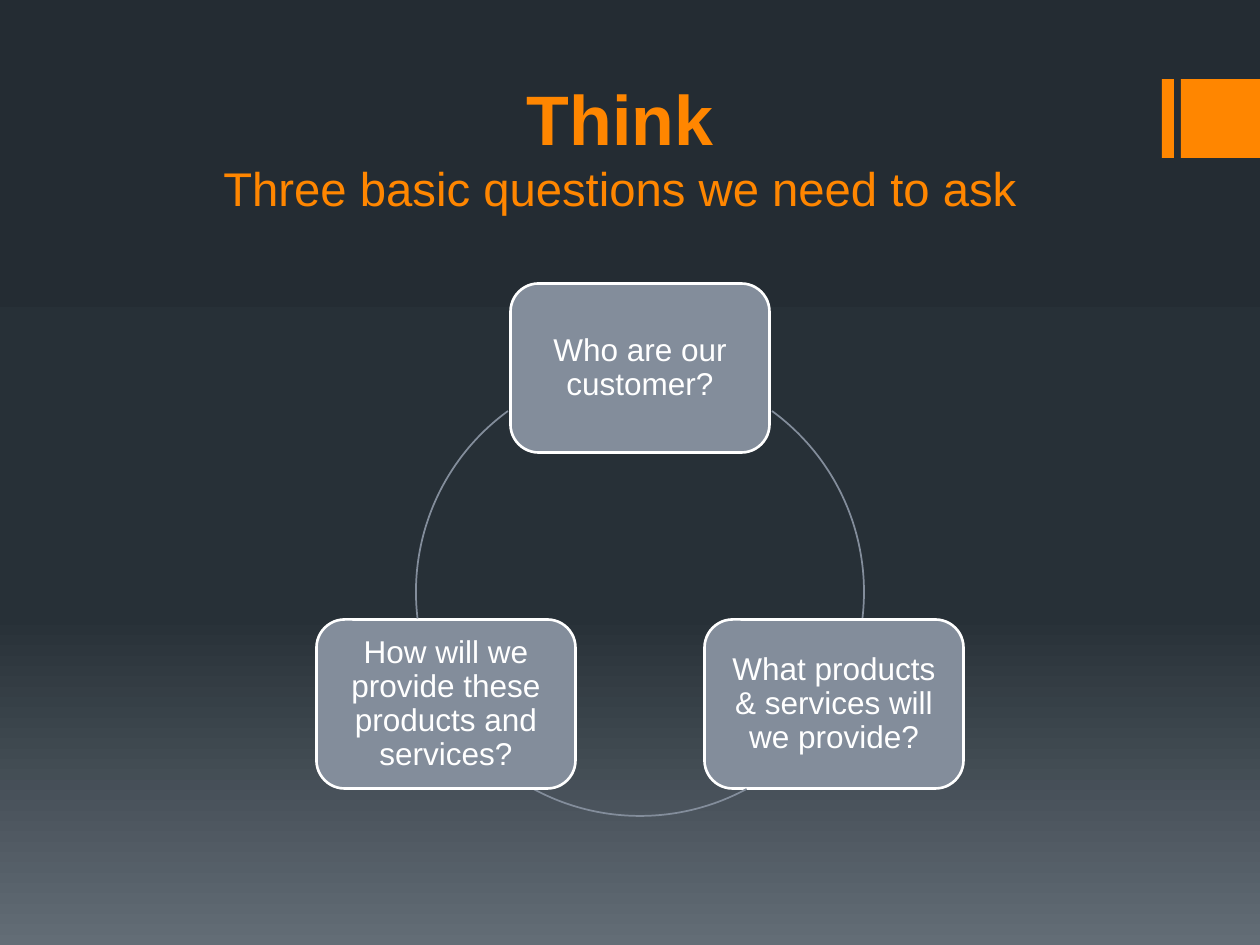
import copy
import math

from pptx import Presentation
from pptx import util as u
from pptx.dml.color import RGBColor
from pptx.enum import shapes, text

SCALE = 914400 / 126
FONT = "Arial"
COLORS = {
    "accent": "FF8600",
    "box": "838D9B",
    "white": "FFFFFF",
    "top": "242C33",
    "middle": "273037",
    "bottom": "636D76",
}
CENTER_X, CENTER_Y, RADIUS = 640, 592, 224
BOX_W, BOX_H = 259, 169
QUESTIONS = [
    "Who are our customer?",
    "What products & services will we provide?",
    "How will we provide these products and services?",
]
ARCS = [(306.1, 6.8), (61.6, 118.4), (173.2, 233.9)]


def px(value):
    return u.Emu(round(value * SCALE))


def color(name):
    return RGBColor.from_string(COLORS[name])


def paint_background(page):
    fill = page.background.fill
    fill.gradient()
    fill.gradient_angle = 270
    first = fill.gradient_stops[0]._gs
    first.addnext(copy.deepcopy(first))
    stops = [("top", 0), ("middle", 0.65), ("bottom", 1)]
    for stop, (name, position) in zip(fill.gradient_stops, stops):
        stop.color.rgb = color(name)
        stop.position = position


def add_shape(page, kind, left, top, width, height, fill=None, line=None, weight=1):
    shape = page.shapes.add_shape(kind, px(left), px(top), px(width), px(height))
    shape.shadow.inherit = False
    if fill:
        shape.fill.solid()
        shape.fill.fore_color.rgb = color(fill)
    else:
        shape.fill.background()
    if line:
        shape.line.color.rgb = color(line)
        shape.line.width = u.Pt(weight)
    else:
        shape.line.fill.background()
    return shape


def write(box, spans, ink, anchor, margin=None, spacing=None):
    """Fill a box with one centred paragraph; each span (words, size, bold) starts a line."""
    frame = box.text_frame
    frame.word_wrap = True
    frame.vertical_anchor = anchor
    if margin is not None:
        frame.margin_left = frame.margin_right = px(margin)
        frame.margin_top = frame.margin_bottom = px(margin)
    para = frame.paragraphs[0]
    para.alignment = text.PP_ALIGN.CENTER
    if spacing:
        para.line_spacing = spacing
    for index, (words, size, bold) in enumerate(spans):
        if index:
            para.add_line_break()
        span = para.add_run()
        span.text = words
        span.font.name = FONT
        span.font.size = u.Pt(size)
        span.font.bold = bold
        span.font.color.rgb = color(ink)


def add_title(page):
    box = page.shapes.add_textbox(px(116), px(63), px(1008), px(159))
    spans = [("Think", 40, True), ("Three basic questions we need to ask", 27, False)]
    write(box, spans, "accent", text.MSO_ANCHOR.BOTTOM)


def add_question(page, words, angle):
    """Place a question box on the circle, at an angle clockwise from the right."""
    x = CENTER_X + RADIUS * math.cos(math.radians(angle))
    y = CENTER_Y + RADIUS * math.sin(math.radians(angle))
    box = add_shape(page, shapes.MSO_SHAPE.ROUNDED_RECTANGLE,
                    x - BOX_W / 2, y - BOX_H / 2, BOX_W, BOX_H,
                    fill="box", line="white", weight=1.5)
    write(box, [(words, 18, False)], "white", text.MSO_ANCHOR.MIDDLE,
          margin=17, spacing=0.9)


def add_arc(page, start, end):
    arc = add_shape(page, shapes.MSO_SHAPE.ARC, CENTER_X - RADIUS, CENTER_Y - RADIUS,
                    2 * RADIUS, 2 * RADIUS, line="box")
    # An adjustment of 1 is 100000 units; a degree is 60000.
    arc.adjustments[0] = start * 0.6
    arc.adjustments[1] = end * 0.6


def main():
    deck = Presentation()
    deck.slide_width, deck.slide_height = u.Inches(10), u.Inches(7.5)
    page = deck.slides.add_slide(deck.slide_layouts[6])
    paint_background(page)
    for left, width in [(1162, 12), (1181, 79)]:
        add_shape(page, shapes.MSO_SHAPE.RECTANGLE, left, 79, width, 79, fill="accent")
    add_title(page)
    for index, (words, arc) in enumerate(zip(QUESTIONS, ARCS)):
        add_question(page, words, -90 + index * 360 / len(QUESTIONS))
        add_arc(page, *arc)
    deck.save("out.pptx")


if __name__ == "__main__":
    main()
